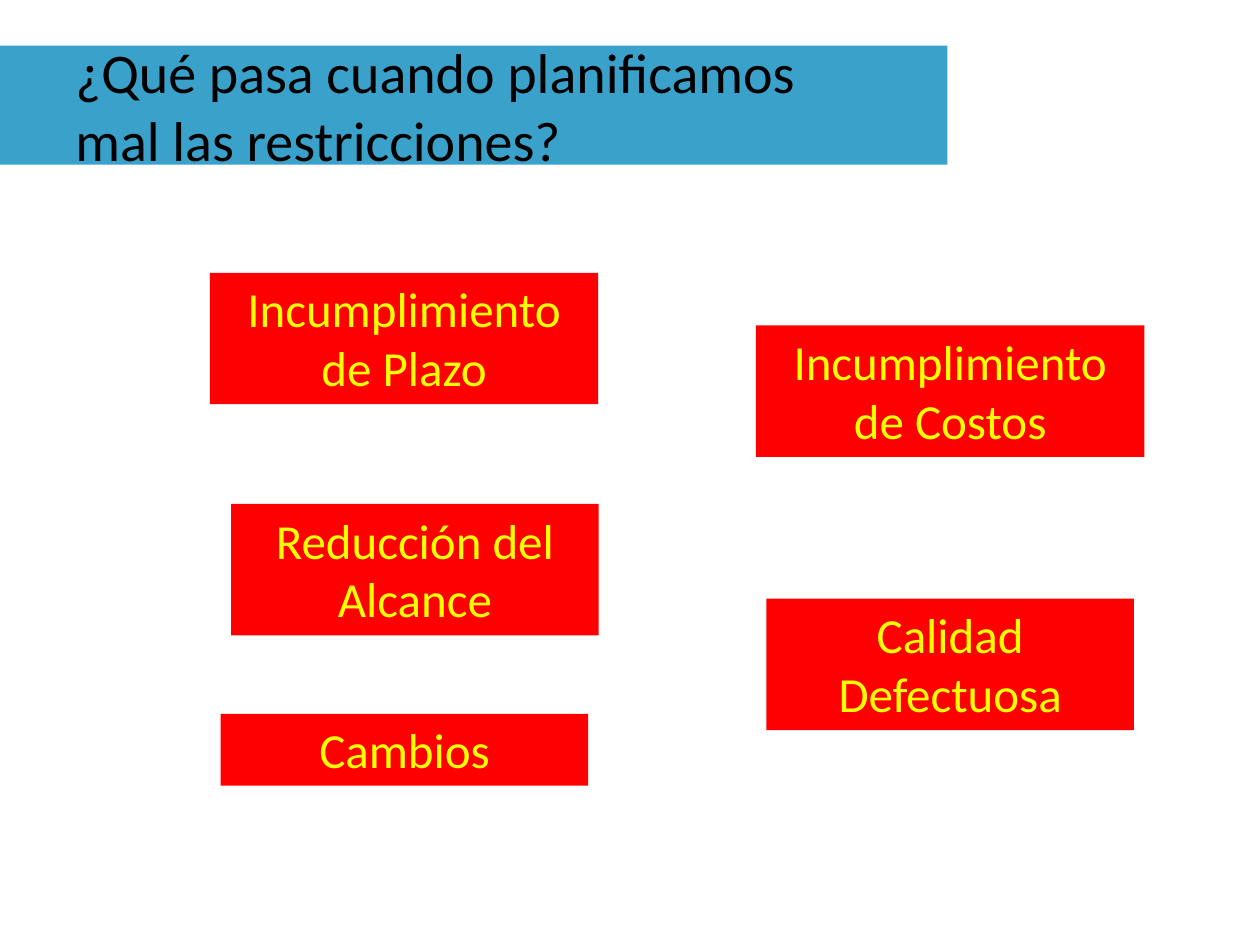
"""Build the slide on the consequences of planning project constraints badly."""
import pptx
import pptx.dml.color
import pptx.enum.shapes
import pptx.enum.text
import pptx.util

Cm = pptx.util.Cm
COLOURS = {"band": "3AA1CA", "title": "000000", "box": "FF0000", "label": "FFFF00"}


def add_block(slide, left, top, width, height, colour):
    block = slide.shapes.add_shape(
        pptx.enum.shapes.MSO_SHAPE.RECTANGLE, Cm(left), Cm(top), Cm(width), Cm(height))
    block.shadow.inherit = False
    block.fill.solid()
    block.fill.fore_color.rgb = pptx.dml.color.RGBColor.from_string(COLOURS[colour])
    block.line.fill.background()
    return block


def write(frame, wording, size, colour, alignment):
    frame.word_wrap = True
    frame.text = wording
    paragraph = frame.paragraphs[0]
    paragraph.alignment = alignment
    for run in paragraph.runs:
        run.font.name = "Calibri"
        run.font.size = pptx.util.Pt(size)
        run.font.color.rgb = pptx.dml.color.RGBColor.from_string(COLOURS[colour])


deck = pptx.Presentation()
deck.slide_width, deck.slide_height = Cm(25.4), Cm(19.05)
slide = deck.slides.add_slide(deck.slide_layouts[6])

add_block(slide, 0, 0.92, 19.1, 2.4, "band")
title = slide.shapes.add_textbox(Cm(1.27), Cm(0.53), Cm(22.86), Cm(3.18)).text_frame
write(title, "¿Qué pasa cuando planificamos\vmal las restricciones?", 32, "title",
      pptx.enum.text.PP_ALIGN.LEFT)
title.vertical_anchor = pptx.enum.text.MSO_ANCHOR.MIDDLE

consequences = [
    ("Incumplimiento de Plazo", 4.23, 5.5, 7.83, 2.65),
    ("Incumplimiento de Costos", 15.24, 6.56, 7.83, 2.65),
    ("Reducción del Alcance", 4.66, 10.16, 7.41, 2.65),
    ("Calidad Defectuosa", 15.45, 12.07, 7.41, 2.65),
    ("Cambios", 4.45, 14.39, 7.41, 1.45),
]
for wording, left, top, width, height in consequences:
    consequence = add_block(slide, left, top, width, height, "box").text_frame
    write(consequence, wording, 28, "label", pptx.enum.text.PP_ALIGN.CENTER)
    consequence.vertical_anchor = pptx.enum.text.MSO_ANCHOR.TOP

deck.save("out.pptx")
